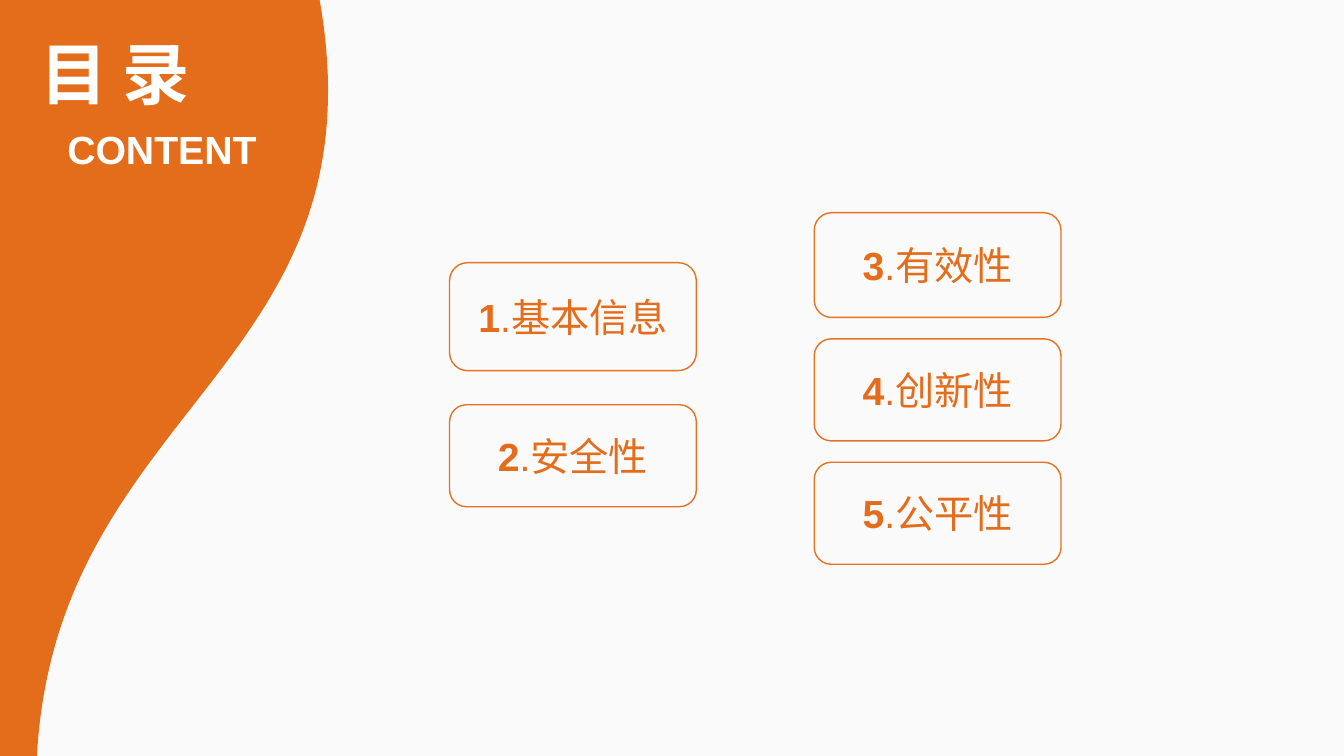
import pptx
import pptx.dml.color
import pptx.enum.shapes
import pptx.enum.text
import pptx.oxml.ns
import pptx.util
from pptx.util import Cm

COLORS = {"background": "FAFAFA", "wave": "E46D1C", "outline": "E57122",
          "item": "E46D1C", "heading": "FFFFFF"}
LATIN_FONT = "Arial"
CHINESE_FONT = "Noto Sans CJK SC"


def rgb(name):
    return pptx.dml.color.RGBColor.from_string(COLORS[name])


def add_run(paragraph, text, *, size=28, color="item", bold=False, font=LATIN_FONT):
    run = paragraph.add_run()
    run.text = text
    run.font.size = pptx.util.Pt(size)
    run.font.bold = bold
    run.font.name = font
    run.font.color.rgb = rgb(color)
    east_asian = pptx.oxml.parse_xml(
        f'<a:ea {pptx.oxml.ns.nsdecls("a")} typeface="{CHINESE_FONT}"/>')
    run.font.fill  # the colour comes before the typefaces in the run properties
    run.font._element.find(pptx.oxml.ns.qn("a:latin")).addnext(east_asian)


def centred_paragraph(shape):
    shape.text_frame.word_wrap = True
    paragraph = shape.text_frame.paragraphs[0]
    paragraph.alignment = pptx.enum.text.PP_ALIGN.CENTER
    return paragraph


def bezier(start, control_1, control_2, end, steps=80):
    """Points along a cubic curve, both ends included."""
    points = []
    for step in range(steps + 1):
        t = step / steps
        weights = ((1 - t) ** 3, 3 * t * (1 - t) ** 2, 3 * t ** 2 * (1 - t), t ** 3)
        points.append(tuple(
            sum(weight * value for weight, value in zip(weights, values))
            for values in zip(start, control_1, control_2, end)))
    return points


def add_wave(slide, left, top, width, height):
    """Orange panel whose right edge is an S curve, slightly bleeding off the slide."""
    edge = bezier((0.19, 1), (0.19, 0.516), (1.176, 0.484), (0.978, 0))
    outline = [(0, 0), (0, 0.972), (0.095, 0.99)] + edge
    points = [(left + round(x * width), top + round(y * height)) for x, y in outline]
    builder = slide.shapes.build_freeform(*points[0])
    builder.add_line_segments(points[1:], close=True)
    wave = builder.convert_to_shape()
    wave.shadow.inherit = False
    wave.fill.solid()
    wave.fill.fore_color.rgb = rgb("wave")
    wave.line.fill.background()


def add_heading(slide, left, top):
    """Chinese title with its English subtitle below."""
    title = slide.shapes.add_textbox(left, top, Cm(7.42), Cm(2.31))
    add_run(centred_paragraph(title), "目 录", size=48, color="heading",
            bold=True, font=CHINESE_FONT)
    subtitle = slide.shapes.add_textbox(
        left + Cm(1.65), top + Cm(2.34), Cm(6.48), Cm(1.45))
    add_run(centred_paragraph(subtitle), "CONTENT", color="heading", bold=True)


def add_item(slide, number, label, left, top, width, height):
    item = slide.shapes.add_shape(
        pptx.enum.shapes.MSO_SHAPE.ROUNDED_RECTANGLE, left, top, width, height)
    item.shadow.inherit = False
    item.fill.background()
    item.line.color.rgb = rgb("outline")
    item.line.width = pptx.util.Pt(1)
    item.text_frame.vertical_anchor = pptx.enum.text.MSO_ANCHOR.MIDDLE
    paragraph = centred_paragraph(item)
    add_run(paragraph, str(number), bold=True)
    add_run(paragraph, f".{label}")


def add_item_column(slide, first_number, items, left, top, width, gap):
    """Numbered boxes stacked downwards with equal gaps."""
    for number, (label, height) in enumerate(items, first_number):
        add_item(slide, number, label, left, top, width, height)
        top += height + gap


def add_contents_slide(presentation):
    slide = presentation.slides.add_slide(presentation.slide_layouts[6])
    slide.background.fill.solid()
    slide.background.fill.fore_color.rgb = rgb("background")

    # Left panel
    add_wave(slide, Cm(-0.81), Cm(-0.15), Cm(9.04), Cm(20.04))
    add_heading(slide, Cm(-0.81), Cm(0.69))

    # Two columns of contents
    add_item_column(slide, 1, [("基本信息", Cm(2.72)), ("安全性", Cm(2.57))],
                    Cm(11.33), Cm(6.62), Cm(6.22), Cm(0.86))
    add_item_column(slide, 3, [("有效性", Cm(2.64)), ("创新性", Cm(2.57)),
                               ("公平性", Cm(2.57))],
                    Cm(20.52), Cm(5.36), Cm(6.22), Cm(0.54))


def main():
    presentation = pptx.Presentation()
    presentation.slide_width = Cm(33.87)
    presentation.slide_height = Cm(19.05)
    add_contents_slide(presentation)
    presentation.save("out.pptx")


if __name__ == "__main__":
    main()
